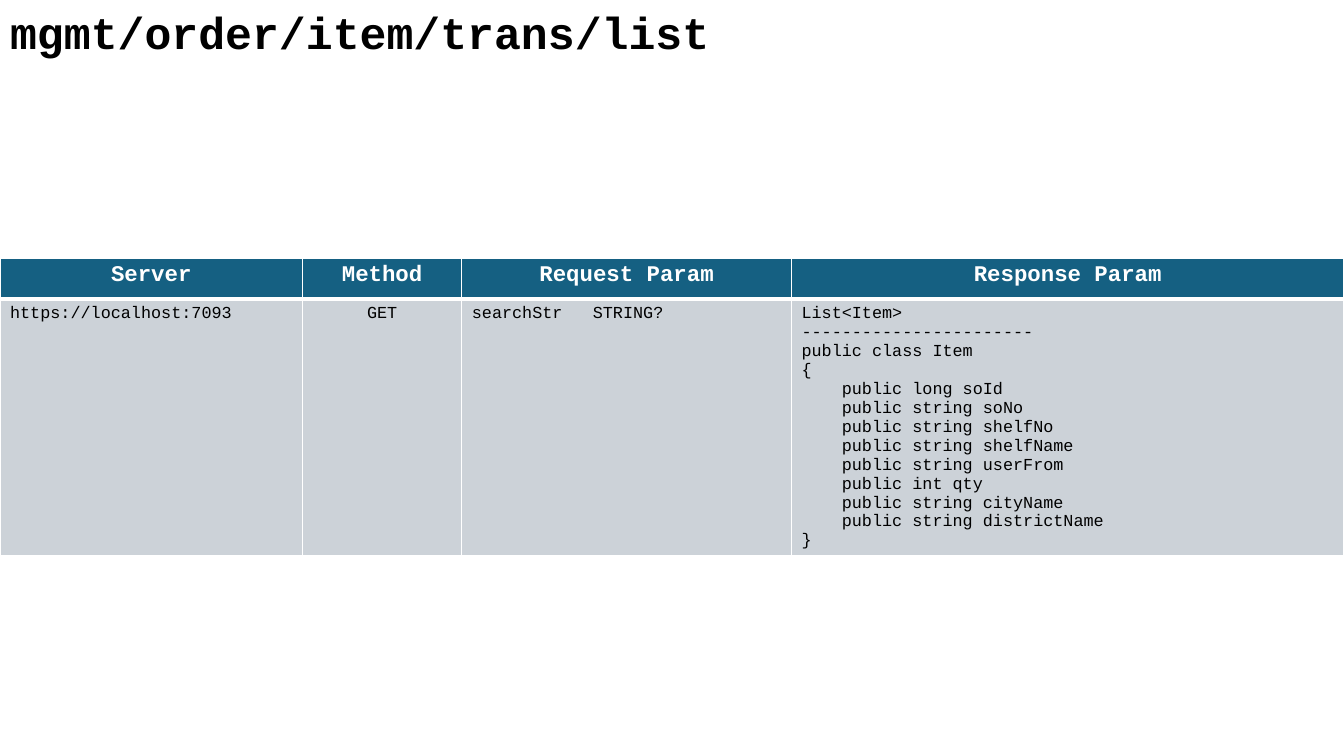
from lxml.etree import SubElement
from pptx import Presentation
from pptx.dml.color import RGBColor
from pptx.enum.text import MSO_ANCHOR, MSO_AUTO_SIZE, PP_ALIGN
from pptx.oxml.ns import qn
from pptx.util import Inches, Pt

COLORS = {"head": "156082", "body": "CCD2D8", "white": "FFFFFF", "black": "000000"}
FONTS = {
    "title": {"name": "Courier New", "size": Pt(32), "bold": True},
    "head": {"name": "Courier New", "size": Pt(16), "bold": True},
    "body": {"name": "Courier New", "size": Pt(12), "bold": False},
}
WIDTHS = [3, 1.58, 3.27, 5.48]
HEIGHTS = [0.41, 2.54]
HEADS = ["Server", "Method", "Request Param", "Response Param"]
ITEM = """List<Item>
-----------------------
public class Item
{
    public long soId
    public string soNo
    public string shelfNo
    public string shelfName
    public string userFrom
    public int qty
    public string cityName
    public string districtName
}"""
VALUES = ["https://localhost:7093", "GET", "searchStr\tSTRING?", ITEM]


def color(name):
    return RGBColor.from_string(COLORS[name])


def style(frame, kind, ink, align):
    for para in frame.paragraphs:
        para.alignment = align
        for run in para.runs:
            for key, value in FONTS[kind].items():
                setattr(run.font, key, value)
            run.font.color.rgb = color(ink)


def add_tab(para, stop):
    tabs = SubElement(para._p.get_or_add_pPr(), qn("a:tabLst"))
    SubElement(tabs, qn("a:tab"), pos=str(stop), algn="l")


def add_edges(cell, base):
    """Draw white cell borders; base is the bottom width in points."""
    props = cell._tc.get_or_add_tcPr()
    for side, width in {"L": 1, "R": 1, "T": 1, "B": base}.items():
        line = SubElement(props, qn(f"a:ln{side}"), w=str(Pt(width)))
        fill = SubElement(line, qn("a:solidFill"))
        SubElement(fill, qn("a:srgbClr"), val=COLORS["white"])


def fill_cell(cell, text, kind, ink, align, base):
    cell.text = text
    add_edges(cell, base)
    cell.fill.solid()
    cell.fill.fore_color.rgb = color(kind)
    if "\t" in text:
        add_tab(cell.text_frame.paragraphs[0], Inches(1.2))
    style(cell.text_frame, kind, ink, align)


def add_grid(slide):
    frame = slide.shapes.add_table(
        len(HEIGHTS), len(WIDTHS), Inches(0), Inches(2.56),
        Inches(sum(WIDTHS)), Inches(sum(HEIGHTS)))
    table = frame.table
    for col, width in zip(table.columns, WIDTHS):
        col.width = Inches(width)
    for row, height in zip(table.rows, HEIGHTS):
        row.height = Inches(height)
    for i, (head, value) in enumerate(zip(HEADS, VALUES)):
        align = PP_ALIGN.CENTER if head == "Method" else PP_ALIGN.LEFT
        fill_cell(table.cell(0, i), head, "head", "white", PP_ALIGN.CENTER, 3)
        fill_cell(table.cell(1, i), value, "body", "black", align, 1)


def set_title(slide, text):
    title = slide.shapes.title
    box = {"left": 0, "top": 0, "width": 9.12, "height": 0.64}
    for key, value in box.items():
        setattr(title, key, Inches(value))
    frame = title.text_frame
    frame.text = text
    frame.word_wrap = True
    frame.auto_size = MSO_AUTO_SIZE.NONE
    frame.vertical_anchor = MSO_ANCHOR.TOP
    style(frame, "title", "black", PP_ALIGN.LEFT)


def main():
    deck = Presentation()
    deck.slide_width, deck.slide_height = Inches(13.33), Inches(7.5)
    slide = deck.slides.add_slide(deck.slide_layouts[5])
    add_grid(slide)
    set_title(slide, "mgmt/order/item/trans/list")
    deck.save("out.pptx")


if __name__ == "__main__":
    main()
